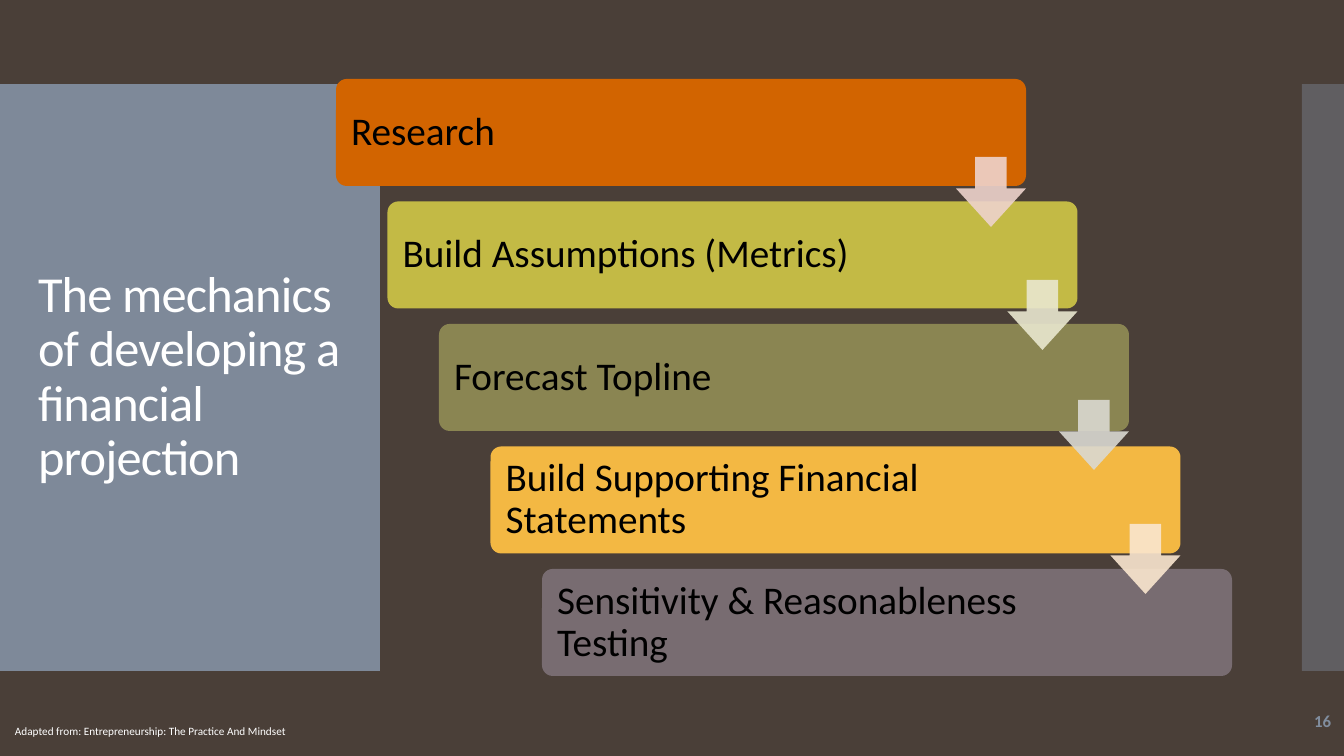
"""Build the slide on the mechanics of developing a financial projection."""
from lxml import etree
from pptx import Presentation
from pptx.dml.color import RGBColor
from pptx.enum.shapes import MSO_SHAPE as SHAPE
from pptx.enum.text import MSO_ANCHOR as ANCHOR, PP_ALIGN as ALIGN
from pptx.oxml.ns import qn
from pptx.util import Emu, Pt

TITLE = "The mechanics of developing a financial projection"
CREDIT = "Adapted from: Entrepreneurship: The Practice And Mindset"
PAGE_NUMBER = "16"
STEPS = [
    ("Research", "orange"),
    ("Build Assumptions (Metrics)", "lime"),
    ("Forecast Topline", "olive"),
    ("Build Supporting Financial Statements", "amber"),
    ("Sensitivity & Reasonableness Testing", "mauve"),
]
ARROWS = [("pink", 157), ("cream", 280), ("silver", 400), ("peach", 524)]
COLORS = {
    "background": "4A3F38", "panel": "818E9F", "white": "FFFFFF", "black": "000000",
    "orange": "D26400", "lime": "C3BA45", "olive": "8A8552", "amber": "F3B843",
    "mauve": "786C71", "pink": "EED3CC", "cream": "E9E7CF", "silver": "DAD9D1",
    "peach": "FAE6CF",
}
FONT = "Calibri"
EMU_PER_PX = 914400 / 100.8
SLIDE_WIDTH, SLIDE_HEIGHT = 1344, 756
PANEL_TOP, PANEL_HEIGHT = 84, 587
BAR_LEFT, BAR_TOP, BAR_WIDTH, BAR_HEIGHT = 336, 79, 690, 107
STEP_RIGHT, STEP_DOWN = 51.5, 122.5
ARROW_SIZE = 70


def px(length):
    return Emu(round(length * EMU_PER_PX))


def color(name):
    return RGBColor.from_string(COLORS[name])


def add_block(slide, kind, box, fill, opacity=100, adjustments=()):
    shape = slide.shapes.add_shape(kind, *map(px, box))
    shape.shadow.inherit = False
    shape.line.fill.background()
    shape.fill.solid()
    shape.fill.fore_color.rgb = color(fill)
    for index, value in enumerate(adjustments):
        shape.adjustments[index] = value
    if opacity < 100:
        tint = shape._element.spPr.find(qn("a:solidFill"))[0]
        etree.SubElement(tint, qn("a:alpha"), val=str(opacity * 1000))
    return shape


def write(shape, text, size, ink, margins=(10, 5, 10, 5), anchor=ANCHOR.MIDDLE,
          align=ALIGN.LEFT, spacing=1.0, bold=False, wrap=True):
    frame = shape.text_frame
    frame.word_wrap = wrap
    frame.vertical_anchor = anchor
    (frame.margin_left, frame.margin_top,
     frame.margin_right, frame.margin_bottom) = map(px, margins)
    paragraph = frame.paragraphs[0]
    paragraph.text = text
    paragraph.alignment = align
    paragraph.line_spacing = spacing
    font = paragraph.font
    font.name, font.size, font.bold = FONT, Pt(size), bold
    font.color.rgb = color(ink)
    return paragraph


def add_text(slide, box, *args, **options):
    return write(slide.shapes.add_textbox(*map(px, box)), *args, **options)


def main():
    presentation = Presentation()
    presentation.slide_width = px(SLIDE_WIDTH)
    presentation.slide_height = px(SLIDE_HEIGHT)
    slide = presentation.slides.add_slide(presentation.slide_layouts[6])
    slide.background.fill.solid()
    slide.background.fill.fore_color.rgb = color("background")

    for left, width, opacity in [(0, 380, 95), (1302, 42, 40)]:
        add_block(slide, SHAPE.RECTANGLE, (left, PANEL_TOP, width, PANEL_HEIGHT),
                  "panel", opacity)
    title = add_text(slide, (28, 124, 325, 507), TITLE, 36, "white", spacing=0.9)
    title.runs[0].font._element.set("spc", "-60")

    for index, (label, fill) in enumerate(STEPS):
        box = (BAR_LEFT + index * STEP_RIGHT, BAR_TOP + index * STEP_DOWN,
               BAR_WIDTH, BAR_HEIGHT)
        bar = add_block(slide, SHAPE.ROUNDED_RECTANGLE, box, fill, adjustments=(0.1,))
        write(bar, label, 28, "black", margins=(12, 12, 133, 12), spacing=0.9)

    for index, (fill, top) in enumerate(ARROWS):
        left = BAR_LEFT + BAR_WIDTH - ARROW_SIZE + index * STEP_RIGHT
        add_block(slide, SHAPE.DOWN_ARROW, (left, top, ARROW_SIZE, ARROW_SIZE),
                  fill, 90, (0.45, 0.55))

    add_text(slide, (5, 719, 297, 24), CREDIT, 8, "white", anchor=ANCHOR.TOP, wrap=False)
    add_text(slide, (1172, 701, 169, 40), PAGE_NUMBER, 12, "panel",
             align=ALIGN.RIGHT, bold=True)
    presentation.save("out.pptx")


if __name__ == "__main__":
    main()
